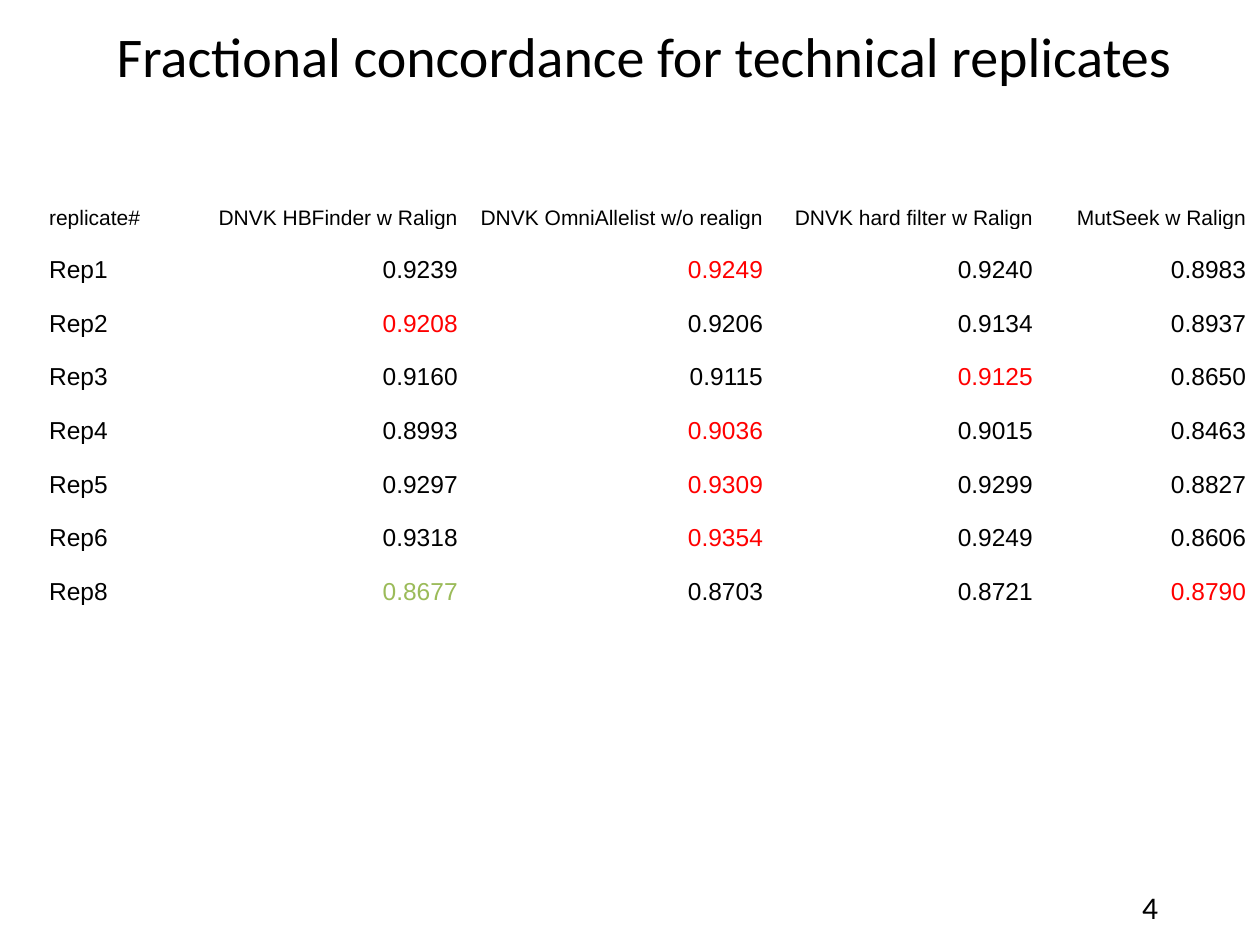
from pptx import Presentation
from pptx.dml.color import RGBColor
from pptx.enum.text import MSO_ANCHOR, PP_ALIGN
from pptx.util import Inches, Pt

BLACK, RED, GREEN = "000000", "FF0000", "9BBB59"
HEADS = ["replicate#", "DNVK HBFinder w Ralign", "DNVK OmniAllelist w/o realign",
         "DNVK hard filter w Ralign", "MutSeek w Ralign"]
ROWS = [
    ["Rep1", "0.9239", "0.9249", "0.9240", "0.8983"],
    ["Rep2", "0.9208", "0.9206", "0.9134", "0.8937"],
    ["Rep3", "0.9160", "0.9115", "0.9125", "0.8650"],
    ["Rep4", "0.8993", "0.9036", "0.9015", "0.8463"],
    ["Rep5", "0.9297", "0.9309", "0.9299", "0.8827"],
    ["Rep6", "0.9318", "0.9354", "0.9249", "0.8606"],
    ["Rep8", "0.8677", "0.8703", "0.8721", "0.8790"],
]
MARKS = {(1, 2): RED, (2, 1): RED, (3, 3): RED, (4, 2): RED, (5, 2): RED,
         (6, 2): RED, (7, 1): GREEN, (7, 4): RED}
WIDTHS = [1.11, 2.15, 2.42, 2.14, 1.69]


def paint(color, code):
    """Set a colour format from a hex string."""
    color.rgb = RGBColor.from_string(code)


def write(frame, text, size, align, font="Calibri", code=BLACK):
    """Put one formatted line of text in a frame."""
    frame.text = text
    line = frame.paragraphs[0]
    line.alignment = align
    face = line.runs[0].font
    face.name, face.size = font, Pt(size)
    paint(face.color, code)


def add_title(slide, left, top, width, height):
    """Place the slide title in its box."""
    title = slide.shapes.title
    title.left, title.top = Inches(left), Inches(top)
    title.width, title.height = Inches(width), Inches(height)
    write(title.text_frame, "Fractional concordance for technical replicates ",
          32, PP_ALIGN.CENTER)


def add_scores(slide, left, top, width, height):
    """Place the table of concordance scores in its box."""
    data = [HEADS] + ROWS
    table = slide.shapes.add_table(len(data), len(HEADS), Inches(left), Inches(top),
                                   Inches(width), Inches(height)).table
    table.first_row = table.horz_banding = False
    for col, share in zip(table.columns, WIDTHS):
        col.width = Inches(width * share / sum(WIDTHS))
    for r, row in enumerate(data):
        for c, text in enumerate(row):
            cell = table.cell(r, c)
            cell.fill.background()
            cell.vertical_anchor = MSO_ANCHOR.BOTTOM
            cell.margin_left = cell.margin_right = cell.margin_top = Inches(0.01)
            cell.margin_bottom = 0
            write(cell.text_frame, text, 14 if r else 12,
                  PP_ALIGN.RIGHT if c else PP_ALIGN.LEFT,
                  "Arial", MARKS.get((r, c), BLACK))


def add_number(slide, left, top, width, height):
    """Place the page number in its box."""
    box = slide.shapes.add_textbox(Inches(left), Inches(top), Inches(width), Inches(height))
    box.text_frame.word_wrap = True
    write(box.text_frame, "4", 18, PP_ALIGN.RIGHT)


def main():
    """Build and save the slide."""
    deck = Presentation()
    deck.slide_width, deck.slide_height = Inches(10), Inches(7.5)
    slide = deck.slides.add_slide(deck.slide_layouts[5])
    add_scores(slide, 0.38, 1.4, 9.52, 3.41)
    add_title(slide, 0.48, 0.12, 9.37, 0.64)
    add_number(slide, 8.43, 7, 0.86, 0.4)
    deck.save("out.pptx")


if __name__ == "__main__":
    main()
